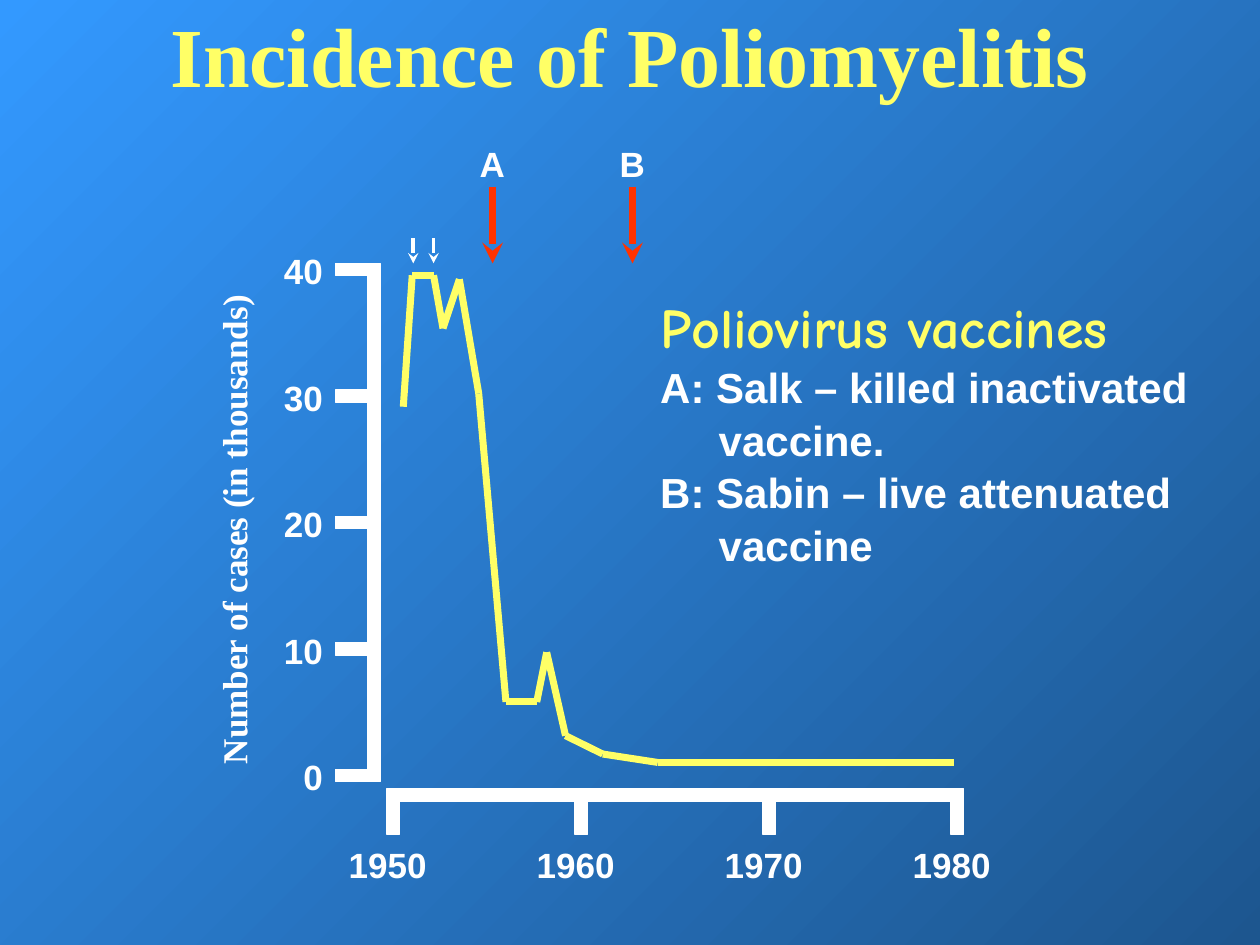
from itertools import pairwise

from lxml.etree import SubElement
from pptx import Presentation
from pptx.dml.color import RGBColor
from pptx.enum.shapes import MSO_CONNECTOR as Connector, MSO_SHAPE as Shape
from pptx.enum.text import MSO_ANCHOR as Anchor, MSO_AUTO_SIZE as AutoSize, PP_ALIGN as Align
from pptx.oxml.ns import qn
from pptx.util import Cm, Pt

WHITE = RGBColor(0xFF, 0xFF, 0xFF)
YELLOW = RGBColor(0xFF, 0xFF, 0x66)
RED = RGBColor(0xFF, 0x33, 0x00)
LIGHT_BLUE = RGBColor(0x33, 0x99, 0xFF)
DARK_BLUE = RGBColor(0x1D, 0x56, 0x8F)
SANS, SERIF, COMIC = "Arial", "Times New Roman", "Comic Neue"

# All lengths are in centimetres.
TITLE = "Incidence of Poliomyelitis"
Y_TITLE = "Number of cases (in thousands)"
CASES = ["40", "30", "20", "10", "0"]
YEARS = ["1950", "1960", "1970", "1980"]
CURVE = [(8.13, 8.2), (8.31, 5.55), (8.74, 5.55), (8.93, 6.62), (9.26, 5.63),
         (9.65, 7.93), (10.2, 14.15), (10.82, 14.15), (11.02, 13.15),
         (11.4, 14.83), (12.15, 15.2), (13.26, 15.37), (19.23, 15.37)]
VACCINES = [("A", 9.93), ("B", 12.75)]
PEAKS = [8.33, 8.74]
HEADING = "Poliovirus vaccines"
NOTES = [("A: Salk – killed inactivated", 0), ("vaccine.", 1.18),
         ("B: Sabin – live attenuated", 0), ("vaccine", 1.18)]

BAR, TICK = 0.25, 0.84
Y_TOP, Y_STEP, Y_TICK_LEFT = 5.31, 2.55, 6.76
X_LEFT, X_STEP, X_TOP = 7.8, 3.79, 15.9
LABEL_HEIGHT = 1.12
ARROW_END = 5.31

deck = Presentation()
deck.slide_width, deck.slide_height = Cm(25.4), Cm(19.05)
page = deck.slides.add_slide(deck.slide_layouts[6])


def style(para, font, size, color):
    for span in para.runs:
        span.font.name, span.font.size, span.font.bold = font, Pt(size), True
        span.font.color.rgb = color


def add_text(text, left, top, width, height=LABEL_HEIGHT, font=SANS, size=20,
             color=WHITE, align=Align.LEFT, wrap=False):
    box = page.shapes.add_textbox(Cm(left), Cm(top), Cm(width), Cm(height))
    frame = box.text_frame
    frame.text = text
    frame.word_wrap = wrap
    frame.auto_size = AutoSize.NONE if wrap else AutoSize.SHAPE_TO_FIT_TEXT
    frame.paragraphs[0].alignment = align
    style(frame.paragraphs[0], font, size, color)
    return box


def add_bar(left, top, width, height):
    bar = page.shapes.add_shape(Shape.RECTANGLE, Cm(left), Cm(top), Cm(width), Cm(height))
    bar.shadow.inherit = False
    bar.fill.solid()
    bar.fill.fore_color.rgb = WHITE
    bar.line.color.rgb = WHITE
    bar.line.width = Pt(0.75)


def add_line(start, end, color, width, arrow=False):
    line = page.shapes.add_connector(Connector.STRAIGHT, *map(Cm, start + end))
    line.line.color.rgb = color
    line.line.width = Pt(width)
    if arrow:
        SubElement(line.line._get_or_add_ln(), qn("a:tailEnd"), type="stealth")
    SubElement(line._element.spPr, qn("a:effectLst"))


background = page.background.fill
background.gradient()
background.gradient_angle = 315
for stop, color in zip(background.gradient_stops, (LIGHT_BLUE, DARK_BLUE)):
    stop.color.rgb = color

title = add_text(TITLE, 0, 0, 25.4, 2.16, SERIF, 48, YELLOW, Align.CENTER, wrap=True)
title.text_frame.vertical_anchor = Anchor.MIDDLE

# Axes with their ticks and labels
add_bar(7.42, Y_TOP, BAR, Y_STEP * (len(CASES) - 1) + BAR)
for i, label in enumerate(CASES):
    top = Y_TOP + i * Y_STEP
    width = 0.5 + 0.41 * len(label)
    add_bar(Y_TICK_LEFT, top, TICK, BAR)
    add_text(label, Y_TICK_LEFT - width, top - 0.4, width, align=Align.RIGHT)

add_bar(X_LEFT, X_TOP, X_STEP * (len(YEARS) - 1) + BAR, BAR)
for i, label in enumerate(YEARS):
    left = X_LEFT + i * X_STEP
    add_bar(left, X_TOP + 0.08, BAR, TICK)
    add_text(label, left - 1.02, 16.87, 2.11)

add_text(Y_TITLE, -0.3, 10.08, 10.03, font=SERIF).rotation = 270

for start, end in pairwise(CURVE):
    add_line(start, end, YELLOW, 4)

for x in PEAKS:
    add_line((x, 4.8), (x, ARROW_END), WHITE, 2, arrow=True)
for label, x in VACCINES:
    add_line((x, 3.76), (x, ARROW_END), RED, 4, arrow=True)
    add_text(label, x - 0.51, 2.75, 1.02)

legend = add_text(HEADING, 13.06, 5.77, 11.51, 5.69, COMIC, 32, YELLOW)
for text, indent in NOTES:
    para = legend.text_frame.add_paragraph()
    para.text = text
    para.space_before = Pt(1.2)
    para._p.get_or_add_pPr().set("marL", str(Cm(indent)))
    style(para, SANS, 24, WHITE)

deck.save("out.pptx")
